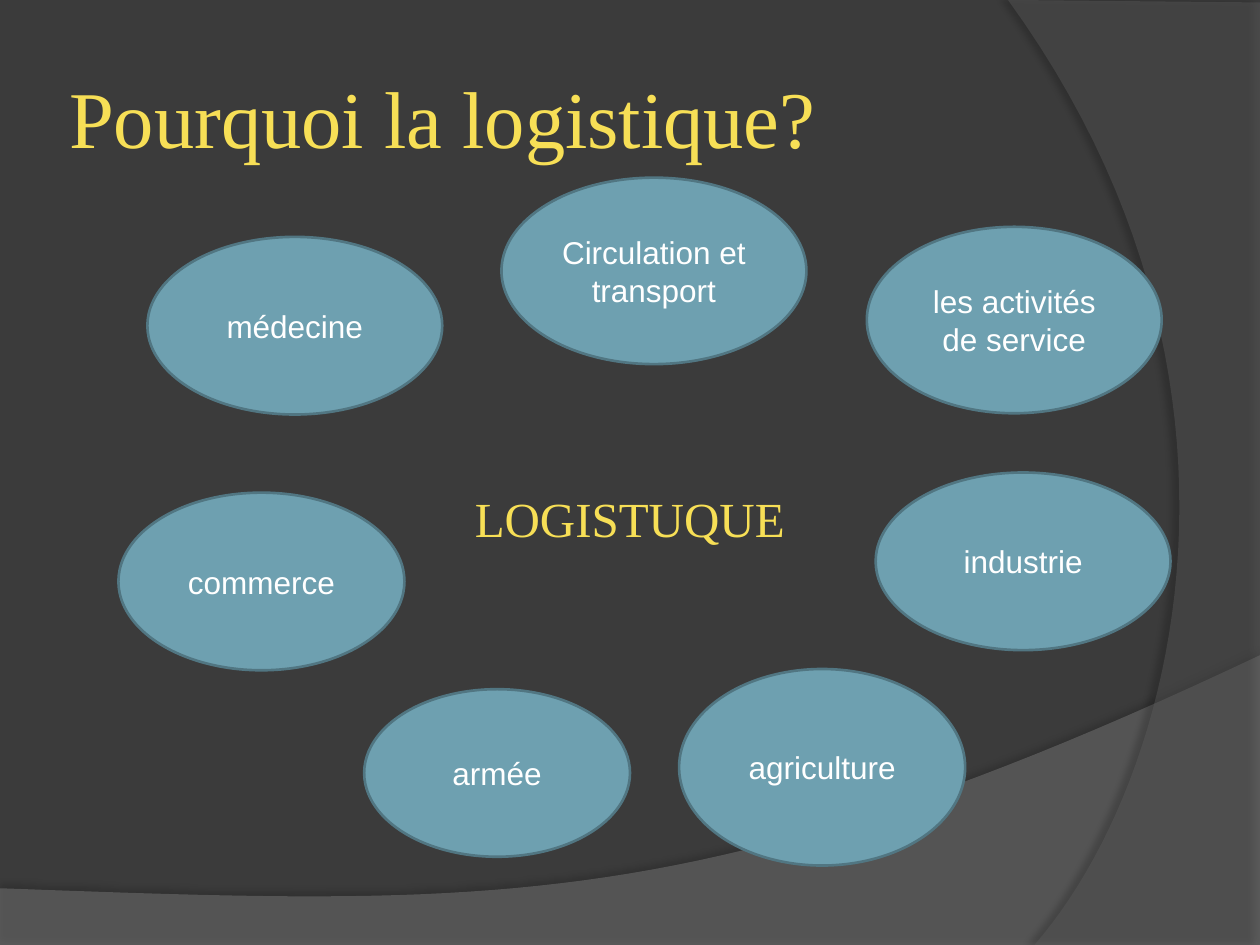
from dataclasses import dataclass

from lxml.etree import SubElement
from pptx import Presentation
from pptx.dml.color import RGBColor
from pptx.enum.shapes import MSO_SHAPE as Shape
from pptx.enum.text import MSO_ANCHOR as Anchor, MSO_AUTO_SIZE as AutoSize, PP_ALIGN as Align
from pptx.oxml.ns import qn
from pptx.util import Emu, Pt

PX = 9144  # 100 px to the inch
CURVE_STEPS = 48

BACKGROUND = RGBColor(0x3B, 0x3B, 0x3B)
WAVE_GREY = RGBColor(0x7F, 0x7F, 0x7F)
ARC_GREY = RGBColor(0x5E, 0x5E, 0x5E)
YELLOW = RGBColor(0xF7, 0xDF, 0x56)
BLUE = RGBColor(0x6E, 0xA0, 0xB0)
DARK_BLUE = RGBColor(0x51, 0x76, 0x82)
WHITE = RGBColor(0xFF, 0xFF, 0xFF)

Point = tuple[float, float]


@dataclass(frozen=True)
class Box:
    left: int
    top: int
    width: int
    height: int

    def emu(self) -> list[Emu]:
        return [px(n) for n in (self.left, self.top, self.width, self.height)]


@dataclass(frozen=True)
class Field:
    """An ellipse naming one field that uses logistics."""
    text: str
    box: Box


@dataclass(frozen=True)
class Heading:
    text: str
    box: Box
    size: int


@dataclass(frozen=True)
class Shadow:
    opacity: int
    blur: float
    distance: float
    angle: int


@dataclass(frozen=True)
class Backdrop:
    points: list[Point]
    color: RGBColor
    opacity: int
    shadow: Shadow


def px(length: float) -> Emu:
    return Emu(round(length * PX))


def curve(start: Point, first: Point, second: Point, end: Point) -> list[Point]:
    """Points along a cubic Bezier curve, both ends included."""
    points = []
    for step in range(CURVE_STEPS + 1):
        t = step / CURVE_STEPS
        u = 1 - t
        weights = (u**3, 3 * u * u * t, 3 * u * t * t, t**3)
        controls = (start, first, second, end)
        points.append((sum(w * p[0] for w, p in zip(weights, controls)),
                       sum(w * p[1] for w, p in zip(weights, controls))))
    return points


BACKDROPS = [
    Backdrop([(0, 751), (1000, 751), *curve((1000, 520), (559, 729), (391, 719), (0, 705))],
             WAVE_GREY, 45, Shadow(35, 4, 3.5, 270)),
    Backdrop([(1000, 2), (1000, 750), *curve((821, 750), (935, 619), (1018, 300), (800, 0))],
             ARC_GREY, 40, Shadow(45, 4, 4, 180)),
]

TITLE = Heading("Pourquoi la logistique?", Box(50, 30, 817, 125), 46)
CENTRE = Heading("LOGISTUQUE", Box(367, 383, 297, 57), 28)

FIELDS = [
    Field("les activités de service", Box(688, 180, 234, 148)),
    Field("industrie", Box(695, 375, 234, 141)),
    Field("agriculture", Box(539, 531, 227, 156)),
    Field("médecine", Box(117, 188, 234, 141)),
    Field("Circulation et transport", Box(398, 141, 242, 148)),
    Field("commerce", Box(94, 391, 227, 141)),
    Field("armée", Box(289, 547, 211, 133)),
]


def set_opacity(color_element, percent: int) -> None:
    SubElement(color_element, qn("a:alpha"), val=str(percent * 1000))


def add_backdrop(page, backdrop: Backdrop) -> None:
    outline = [(px(x), px(y)) for x, y in backdrop.points]
    builder = page.shapes.build_freeform(*outline[0], scale=1.0)
    builder.add_line_segments(outline[1:], close=True)
    shape = builder.convert_to_shape()
    shape.fill.solid()
    shape.fill.fore_color.rgb = backdrop.color
    shape.line.fill.background()
    shape.shadow.inherit = False
    properties = shape.element.spPr
    set_opacity(properties.find(qn("a:solidFill")).find(qn("a:srgbClr")), backdrop.opacity)
    shadow = backdrop.shadow
    effect = SubElement(properties.find(qn("a:effectLst")), qn("a:outerShdw"),
                        blurRad=str(Pt(shadow.blur)), dist=str(Pt(shadow.distance)),
                        dir=str(shadow.angle * 60000), algn="ctr", rotWithShape="0")
    set_opacity(SubElement(effect, qn("a:srgbClr"), val="000000"), shadow.opacity)


def write(frame, text: str, font_name: str, size: int, color: RGBColor) -> None:
    frame.word_wrap = True
    frame.text = text
    font = frame.paragraphs[0].runs[0].font
    font.name = font_name
    font.size = Pt(size)
    font.color.rgb = color


def add_heading(page, heading: Heading):
    frame = page.shapes.add_textbox(*heading.box.emu()).text_frame
    write(frame, heading.text, "Times New Roman", heading.size, YELLOW)
    return frame


def add_field(page, field: Field) -> None:
    shape = page.shapes.add_shape(Shape.OVAL, *field.box.emu())
    shape.shadow.inherit = False
    shape.fill.solid()
    shape.fill.fore_color.rgb = BLUE
    shape.line.color.rgb = DARK_BLUE
    shape.line.width = Pt(1.5)
    frame = shape.text_frame
    write(frame, field.text, "Arial", 18, WHITE)
    frame.vertical_anchor = Anchor.MIDDLE
    frame.paragraphs[0].alignment = Align.CENTER


def main() -> None:
    deck = Presentation()
    deck.slide_width, deck.slide_height = px(1000), px(750)
    page = deck.slides.add_slide(deck.slide_layouts[6])
    page.background.fill.solid()
    page.background.fill.fore_color.rgb = BACKGROUND

    for backdrop in BACKDROPS:
        add_backdrop(page, backdrop)

    title = add_heading(page, TITLE)
    title.vertical_anchor = Anchor.MIDDLE
    title.margin_left = title.margin_right = px(5)
    add_heading(page, CENTRE).auto_size = AutoSize.SHAPE_TO_FIT_TEXT

    for field in FIELDS:
        add_field(page, field)

    deck.save("out.pptx")


if __name__ == "__main__":
    main()
